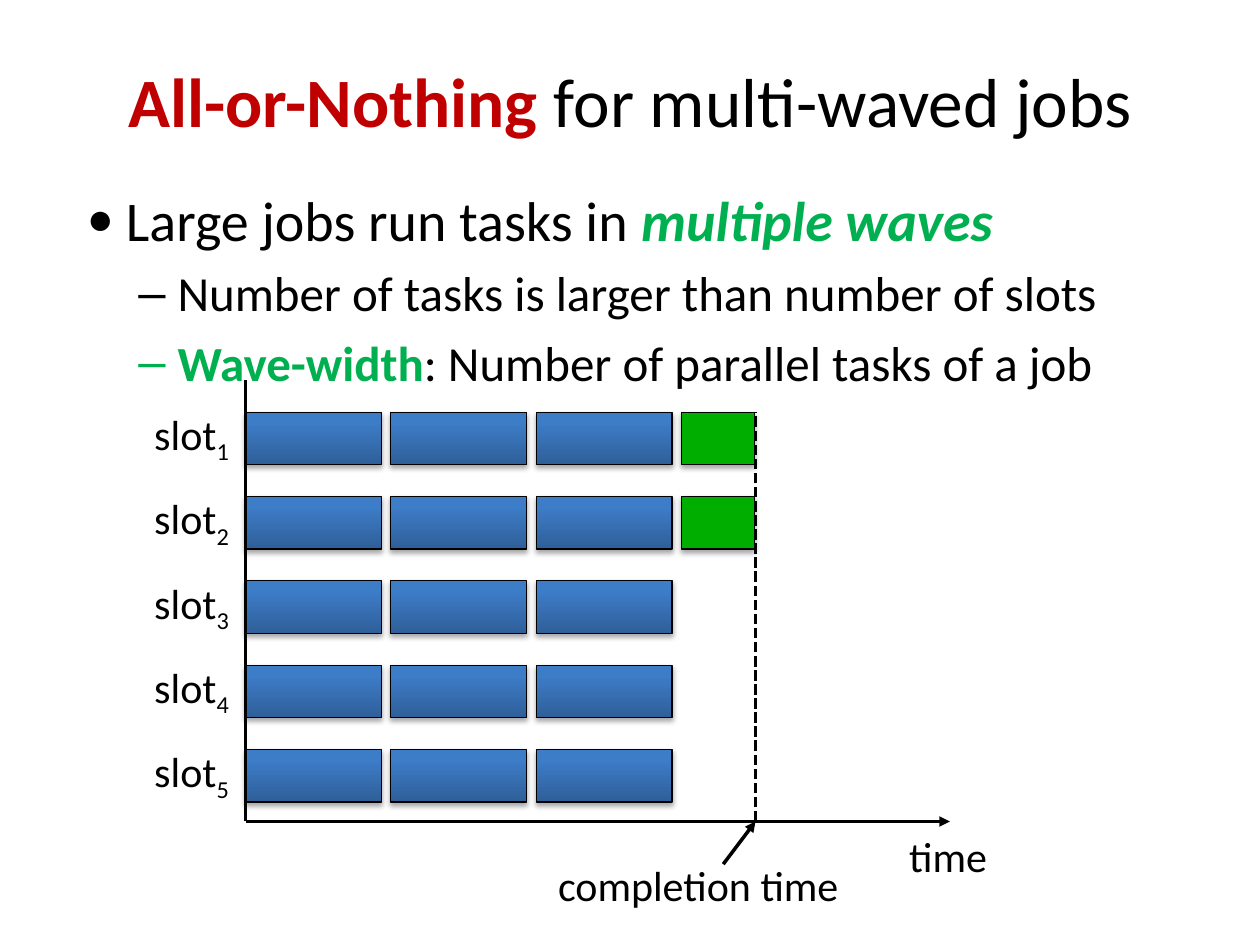
from lxml import etree
from pptx import Presentation
from pptx.dml.color import RGBColor
from pptx.enum.dml import MSO_LINE
from pptx.enum.shapes import MSO_CONNECTOR, MSO_SHAPE
from pptx.enum.text import MSO_ANCHOR, MSO_AUTO_SIZE, PP_ALIGN
from pptx.oxml.ns import qn
from pptx.util import Cm, Pt

RECTANGLE = MSO_SHAPE.RECTANGLE
STRAIGHT = MSO_CONNECTOR.STRAIGHT
DASHED = MSO_LINE.SQUARE_DOT
CENTER = PP_ALIGN.CENTER
MIDDLE = MSO_ANCHOR.MIDDLE
NO_FIT = MSO_AUTO_SIZE.NONE
GROW = MSO_AUTO_SIZE.SHAPE_TO_FIT_TEXT

BLACK, RED, GREEN = "000000", "C00000", "00B050"
PARTIAL_FILL = "00AE00"
FULL_FILL = ("2F5F99", "3D7CC7")


def color(code):
    return RGBColor.from_string(code)


def add_xml(parent, tag, **attributes):
    return etree.SubElement(parent, qn(tag), attributes)


class Slide:
    """Style and drawing methods for the current slide."""

    font = "Calibri"

    def __init__(self, deck):
        self.page = deck.slides.add_slide(deck.slide_layouts[5])
        self.shapes = self.page.shapes

    def fill_para(self, para, size, spans):
        """Each span is (text, color, bold, italic, baseline); only text is required."""
        para.font.name = self.font
        para.font.size = Pt(size)
        for text, code, bold, italic, baseline in (
            tuple(span) + (None, BLACK, False, False, 0)[len(span):] for span in spans
        ):
            span = para.add_run()
            span.text = text
            span.font.color.rgb = color(code)
            span.font.bold = bold
            span.font.italic = italic
            if baseline:
                span.font._element.set("baseline", str(baseline * 1000))

    def title(self, left, top, width, height, size, spans):
        box = self.shapes.title
        box.left, box.top, box.width, box.height = Cm(left), Cm(top), Cm(width), Cm(height)
        frame = box.text_frame
        frame.auto_size = NO_FIT
        frame.vertical_anchor = MIDDLE
        frame.paragraphs[0].alignment = CENTER
        self.fill_para(frame.paragraphs[0], size, spans)

    def text(self, left, top, width, height):
        box = self.shapes.add_textbox(Cm(left), Cm(top), Cm(width), Cm(height))
        return box.text_frame

    def label(self, left, top, width, spans):
        frame = self.text(left, top, width, 1.27)
        frame.word_wrap = False
        frame.auto_size = GROW
        self.fill_para(frame.paragraphs[0], 24, spans)

    def bullets(self, left, top, width, height, items):
        frame = self.text(left, top, width, height)
        frame.word_wrap = True
        for index, (mark, scale, indent, size, spans) in enumerate(items):
            para = frame.add_paragraph() if index else frame.paragraphs[0]
            properties = para._p.get_or_add_pPr()
            properties.set("marL", str(Cm(indent)))
            properties.set("indent", str(Cm(-0.79)))
            add_xml(properties, "a:buSzPct", val=str(scale * 1000))
            add_xml(properties, "a:buFont", typeface="Arial")
            add_xml(properties, "a:buChar", char=mark)
            para.space_before = Pt(6)
            self.fill_para(para, size, spans)

    def task(self, left, top, width, height, fill):
        box = self.shapes.add_shape(RECTANGLE, Cm(left), Cm(top), Cm(width), Cm(height))
        if isinstance(fill, str):
            box.fill.solid()
            box.fill.fore_color.rgb = color(fill)
        else:
            box.fill.gradient()
            box.fill.gradient_angle = 90
            for stop, code, position in zip(box.fill.gradient_stops, fill, (0, 0.8)):
                stop.color.rgb = color(code)
                stop.position = position
        box.line.color.rgb = color(BLACK)
        box.line.width = Pt(0.75)
        # Soft shadow straight below
        box.shadow.inherit = False
        effects = box._element.spPr.find(qn("a:effectLst"))
        shadow = add_xml(effects, "a:outerShdw", blurRad=str(Pt(3.1)), dist=str(Pt(1.8)),
                         dir="5400000", rotWithShape="0")
        tint = add_xml(shadow, "a:srgbClr", val=BLACK)
        add_xml(tint, "a:alpha", val="35000")

    def line(self, x1, y1, x2, y2, arrow=False, dash=None):
        line = self.shapes.add_connector(STRAIGHT, Cm(x1), Cm(y1), Cm(x2), Cm(y2))
        line.line.color.rgb = color(BLACK)
        line.line.width = Pt(2)
        if dash:
            line.line.dash_style = dash
        if arrow:
            add_xml(line.line._get_or_add_ln(), "a:tailEnd", type="triangle")
        add_xml(line._element.spPr, "a:effectLst")


def main():
    deck = Presentation()
    deck.slide_width, deck.slide_height = Cm(25.4), Cm(19.05)
    slide = Slide(deck)

    # Title
    slide.title(1.27, 0.43, 22.86, 3.18, 39.6,
                [("All-or-Nothing", RED, True), (" for multi-waved jobs",)])

    # Task grid: three full waves, then a partial one
    axis_x, axis_y, end_x = 4.95, 16.56, 15.23
    first_top, slot_step, wave_step = 8.31, 1.7, 2.93
    slots, full_waves, partial_slots = 5, 3, 2
    for slot in range(slots):
        top = first_top + slot * slot_step
        for wave in range(full_waves):
            slide.task(axis_x + wave * wave_step, top, 2.74, 1.06, FULL_FILL)
        if slot < partial_slots:
            slide.task(axis_x + full_waves * wave_step, top, 1.47, 1.06, PARTIAL_FILL)
        slide.label(2.86, top - 0.2, 2.06,
                    [("slot",), (str(slot + 1), BLACK, False, False, -25)])

    # Completion time
    slide.line(end_x, axis_y, end_x, first_top, dash=DASHED)
    slide.line(14.58, 17.42, end_x, axis_y, arrow=True)
    slide.label(11, 17.2, 6.22, [("completion time",)])

    # Axes
    slide.line(axis_x, axis_y, axis_x, 7.67)
    slide.line(axis_x, axis_y, 19.15, axis_y, arrow=True)
    slide.label(18.08, 16.61, 2.11, [("time",)])

    # Bullets
    slide.bullets(1.27, 3.61, 22.86, 4.17, [
        ("●", 80, 1.02, 32,
         [("Large jobs run tasks in ",), ("multiple waves", GREEN, True, True)]),
        ("–", 100, 2.06, 28, [("Number of tasks is larger than number of slots",)]),
        ("–", 100, 2.06, 28,
         [("Wave-width", GREEN, True), (": Number of parallel tasks of a job",)]),
    ])

    deck.save("out.pptx")


if __name__ == "__main__":
    main()
